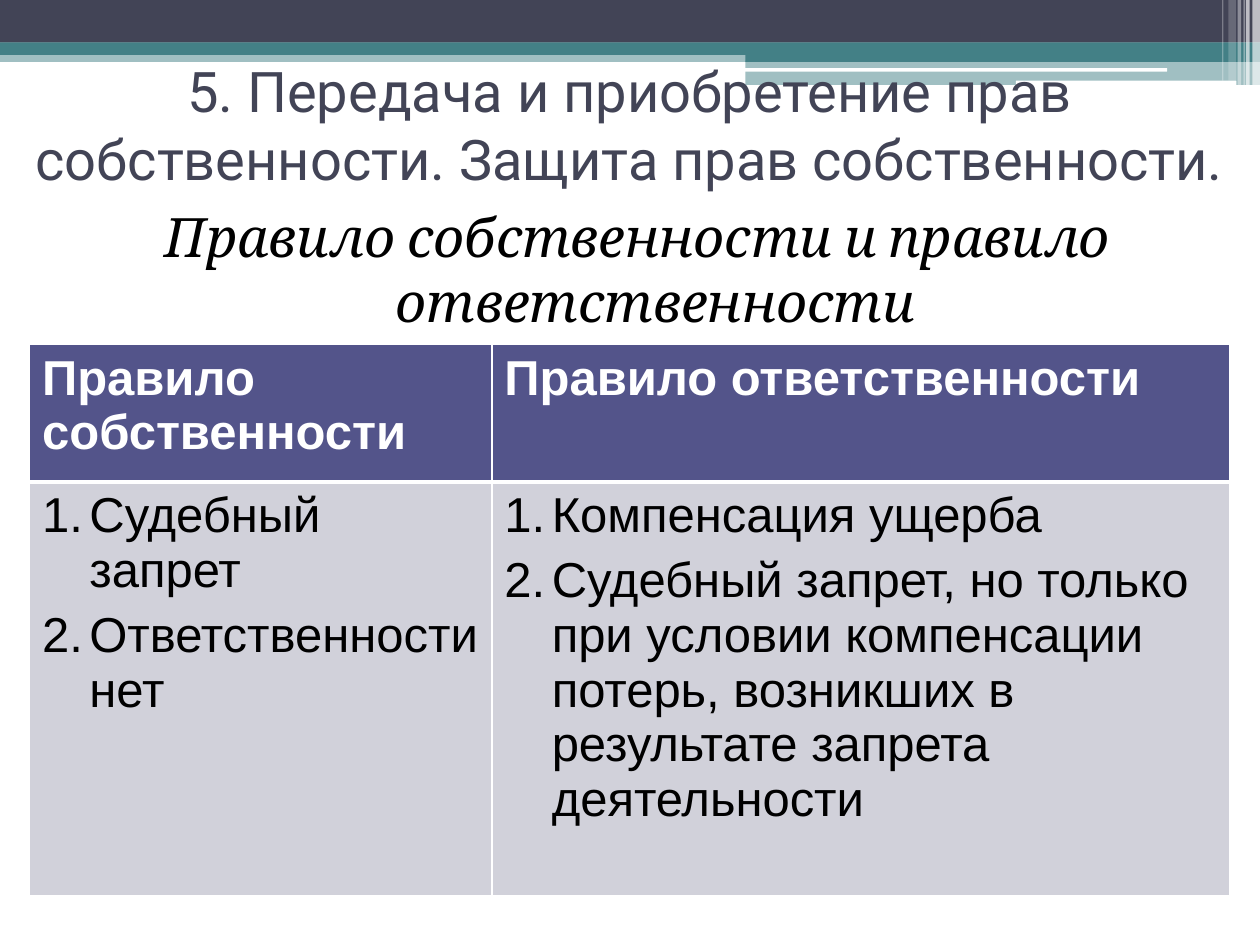
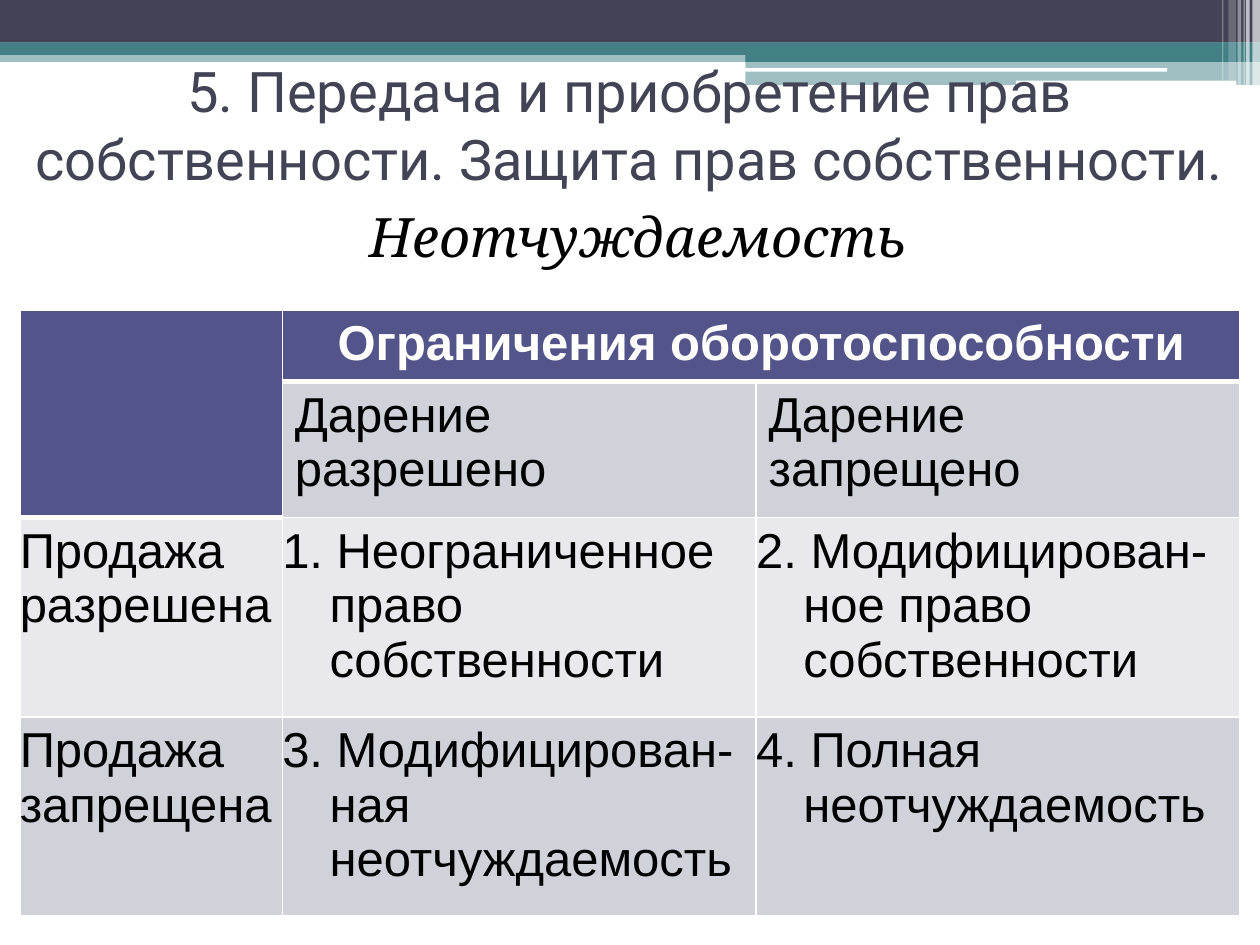
from dataclasses import dataclass
from typing import NamedTuple

from lxml import etree
from pptx import Presentation
from pptx.dml.color import RGBColor
from pptx.enum.shapes import MSO_SHAPE
from pptx.enum.text import MSO_ANCHOR, PP_ALIGN
from pptx.oxml.ns import qn
from pptx.util import Pt

COLORS = {
    "navy": "424456",
    "teal": "438086",
    "white": "FFFFFF",
    "black": "000000",
    "header": "53548A",
    "band_dark": "D1D1DA",
    "band_light": "E9E9ED",
}
SLIDE_WIDTH, SLIDE_HEIGHT = 720, 540
TITLE = "5. Передача и приобретение прав собственности. Защита прав собственности."
LIST_INDENT = 27


class Bar(NamedTuple):
    left: float
    top: float
    width: float
    height: float
    color: str
    opacity: int = 100
    rounded: bool = False


BARS = [
    Bar(0, 28.8, 720, 6.6, "teal", 50),
    Bar(0, 0, 720, 24.4, "navy"),
    Bar(0, 24.2, 720, 7.2, "teal"),
    Bar(426, 28.2, 294, 7.2, "teal"),
    Bar(426, 34.6, 294, 14, "teal", 50),
    Bar(425.6, 38.9, 241.4, 2.1, "white", rounded=True),
    Bar(580.5, 46.1, 126, 2.6, "white", rounded=True),
    Bar(715.6, 0, 4.4, 48.8, "white", 65),
    Bar(712, 0, 2.16, 48.8, "white", 65),
    Bar(710.6, 0, 0.72, 48.8, "white", 60),
    Bar(707.2, 0, 2.16, 48.8, "white", 40),
    Bar(702, 0, 4.3, 46.1, "white", 20),
    Bar(698.4, 0, 0.72, 46.1, "white", 30),
]


@dataclass
class TableCell:
    lines: tuple[str, ...] = ()
    fill: str = "band_dark"
    align: PP_ALIGN = PP_ALIGN.LEFT
    space_before: float = 0
    hanging: bool = False
    numbered: bool = False
    flush: bool = False

    @property
    def is_header(self) -> bool:
        return self.fill == "header"


@dataclass
class TableLayout:
    left: float
    top: float
    columns: list[float]
    rows: list[float]
    cells: list[list[TableCell]]
    merges: tuple = ()


@dataclass
class RuleSlide:
    subtitle: str
    table: TableLayout


def header(*lines: str, align: PP_ALIGN = PP_ALIGN.LEFT) -> TableCell:
    return TableCell(lines, "header", align)


def numbered(*lines: str) -> TableCell:
    return TableCell(lines, space_before=6, hanging=True, numbered=True)


def sale_row(fill: str, label: str, *outcomes: str) -> list[TableCell]:
    """Row label followed by hanging outcomes, all without side margins."""
    return [
        TableCell((text,), fill, space_before=6, hanging=index > 0, flush=True)
        for index, text in enumerate((label, *outcomes))
    ]


SLIDES = [
    RuleSlide(
        "Правило собственности и правило ответственности",
        TableLayout(
            16.9, 196.9, [264.2, 421.8], [78.6, 236.4],
            [
                [header("Правило собственности"), header("Правило ответственности")],
                [
                    numbered("Судебный запрет", "Ответственности нет"),
                    numbered(
                        "Компенсация ущерба",
                        "Судебный запрет, но только при условии компенсации потерь, "
                        "возникших в результате запрета деятельности",
                    ),
                ],
            ],
        ),
    ),
    RuleSlide(
        "Неотчуждаемость",
        TableLayout(
            11.3, 177.2, [150, 270.8, 276.6], [38.2, 77.8, 113.8, 113.8],
            [
                [header(), header("Ограничения оборотоспособности", align=PP_ALIGN.CENTER), header()],
                [header(), TableCell(("Дарение разрешено",)), TableCell(("Дарение запрещено",))],
                sale_row("band_light", "Продажа разрешена",
                         "1. Неограниченное право собственности",
                         "2. Модифицирован-ное право собственности"),
                sale_row("band_dark", "Продажа запрещена",
                         "3. Модифицирован-ная неотчуждаемость",
                         "4. Полная неотчуждаемость"),
            ],
            merges=(((0, 0), (1, 0)), ((0, 1), (0, 2))),
        ),
    ),
]


def rgb(name: str) -> RGBColor:
    return RGBColor.from_string(COLORS[name])


def write_text(paragraph, text: str, *, font: str, size: float, color: str,
               bold: bool = False, italic: bool = False,
               align: PP_ALIGN = PP_ALIGN.LEFT, space_before: float = 0,
               margin: float = 0, indent: float = 0, numbered: bool = False) -> None:
    run = paragraph.add_run()
    run.text = text
    run.font.name, run.font.size = font, Pt(size)
    run.font.bold, run.font.italic = bold, italic
    run.font.color.rgb = rgb(color)
    paragraph.alignment = align
    paragraph.space_before = Pt(space_before)
    properties = paragraph._p.get_or_add_pPr()
    properties.set("marL", str(Pt(margin)))
    properties.set("indent", str(Pt(indent)))
    if numbered:
        etree.SubElement(properties, qn("a:buAutoNum"), type="arabicPeriod")


def add_bar(slide, bar: Bar) -> None:
    kind = MSO_SHAPE.ROUNDED_RECTANGLE if bar.rounded else MSO_SHAPE.RECTANGLE
    shape = slide.shapes.add_shape(
        kind, Pt(bar.left), Pt(bar.top), Pt(bar.width), Pt(bar.height))
    shape.shadow.inherit = False
    shape.line.fill.background()
    shape.fill.solid()
    shape.fill.fore_color.rgb = rgb(bar.color)
    if bar.opacity < 100:
        color = shape._element.spPr.find(".//" + qn("a:srgbClr"))
        etree.SubElement(color, qn("a:alpha"), val=str(bar.opacity * 1000))


def add_text_box(slide, text: str, top: float, height: float,
                 anchor: MSO_ANCHOR, **text_format) -> None:
    """Full-width box with one centred paragraph."""
    box = slide.shapes.add_textbox(Pt(0), Pt(top), Pt(SLIDE_WIDTH), Pt(height))
    frame = box.text_frame
    frame.word_wrap = True
    frame.vertical_anchor = anchor
    write_text(frame.paragraphs[0], text, align=PP_ALIGN.CENTER, **text_format)


def set_borders(cell, top: float, bottom: float) -> None:
    properties = cell._tc.get_or_add_tcPr()
    widths = {"lnL": 1, "lnR": 1, "lnT": top, "lnB": bottom}
    for position, (side, width) in enumerate(widths.items()):
        line = etree.Element(qn(f"a:{side}"), w=str(Pt(width)))
        fill = etree.SubElement(line, qn("a:solidFill"))
        etree.SubElement(fill, qn("a:srgbClr"), val=COLORS["white"])
        properties.insert(position, line)


def fill_cell(cell, content: TableCell, below_header: bool) -> None:
    cell.fill.solid()
    cell.fill.fore_color.rgb = rgb(content.fill)
    set_borders(cell, 3 if below_header else 1, 3 if content.is_header else 1)
    if content.flush:
        cell.margin_left = cell.margin_right = Pt(0)
    hang = LIST_INDENT if content.hanging else 0
    frame = cell.text_frame
    for index, line in enumerate(content.lines):
        paragraph = frame.add_paragraph() if index else frame.paragraphs[0]
        write_text(
            paragraph, line, font="Arial", size=28, bold=content.is_header,
            color="white" if content.is_header else "black", align=content.align,
            space_before=content.space_before, margin=hang, indent=-hang,
            numbered=content.numbered)


def add_rule_table(slide, layout: TableLayout) -> None:
    table = slide.shapes.add_table(
        len(layout.rows), len(layout.columns), Pt(layout.left), Pt(layout.top),
        Pt(sum(layout.columns)), Pt(sum(layout.rows))).table
    for column, width in zip(table.columns, layout.columns):
        column.width = Pt(width)
    for row, height in zip(table.rows, layout.rows):
        row.height = Pt(height)
    for start, end in layout.merges:
        table.cell(*start).merge(table.cell(*end))
    for row_index, row in enumerate(layout.cells):
        for column_index, content in enumerate(row):
            below_header = (row_index > 0 and not content.is_header
                            and layout.cells[row_index - 1][column_index].is_header)
            fill_cell(table.cell(row_index, column_index), content, below_header)


def add_rule_slide(presentation, content: RuleSlide) -> None:
    slide = presentation.slides.add_slide(presentation.slide_layouts[6])
    for bar in BARS:
        add_bar(slide, bar)
    add_text_box(slide, content.subtitle, 112.5, 427.5, MSO_ANCHOR.TOP,
                 font="Cambria", size=31, color="black", italic=True,
                 space_before=12, margin=28.8, indent=-20.2)
    add_rule_table(slide, content.table)
    add_text_box(slide, TITLE, 28.8, 84.2, MSO_ANCHOR.MIDDLE,
                 font="Roboto", size=32, color="navy")


def main() -> None:
    presentation = Presentation()
    presentation.slide_width, presentation.slide_height = Pt(SLIDE_WIDTH), Pt(SLIDE_HEIGHT)
    for content in SLIDES:
        add_rule_slide(presentation, content)
    presentation.save("out.pptx")


if __name__ == "__main__":
    main()
